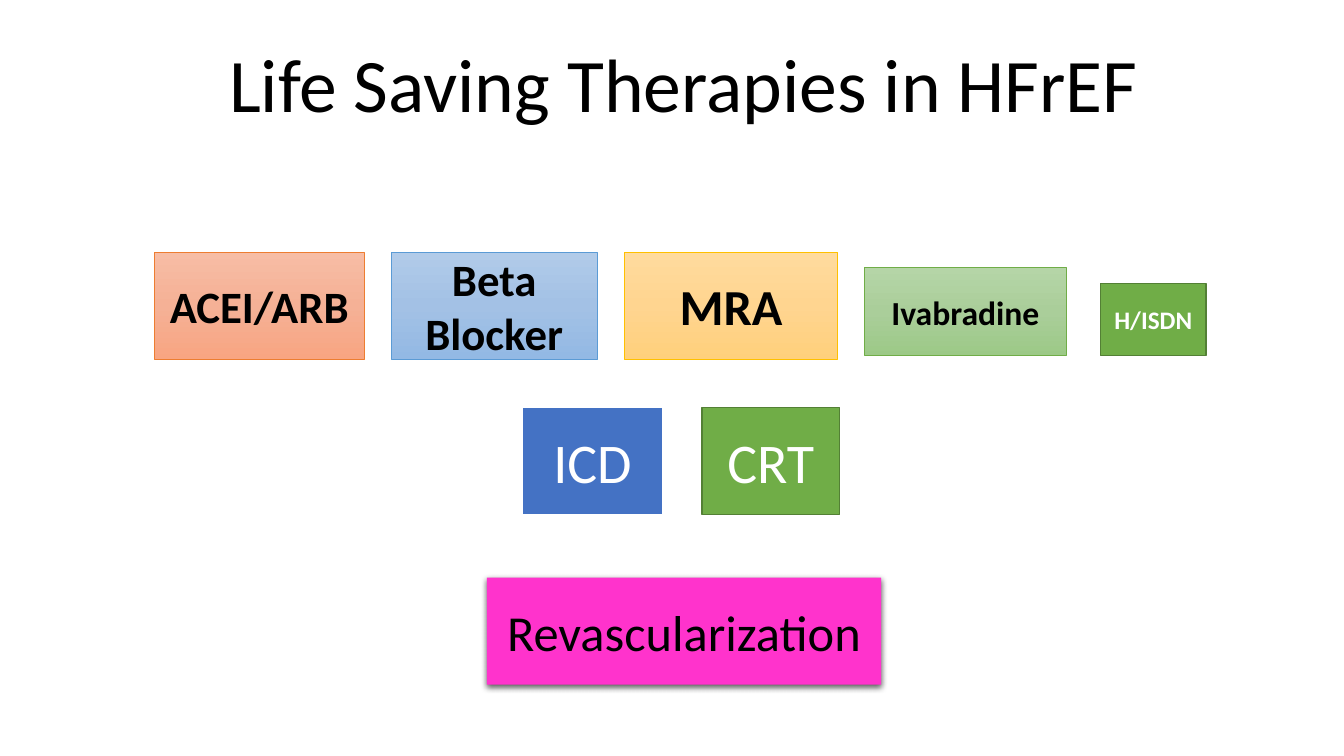
from copy import deepcopy

from pptx import Presentation
from pptx.dml.color import RGBColor
from pptx.enum.shapes import MSO_SHAPE
from pptx.enum.text import MSO_ANCHOR, MSO_AUTO_SIZE, PP_ALIGN
from pptx.oxml import parse_xml
from pptx.util import Inches, Pt

TITLE = "Life Saving Therapies in HFrEF"
TITLE_AREA = (15.95, 4.15, 69.84, 13.47)
BLACK, WHITE = "000000", "FFFFFF"
GREEN, DARK_GREEN = "70AD47", "538035"
DRUG_TOP, DEVICE_TOP, SURGERY_TOP = 33.33, 53.89, 76.4
BOX_HEIGHT = 14.18

# text, (left, top, width, height) in percent, fills, line, font
THERAPIES = [
    ("ACEI/ARB", (11.47, DRUG_TOP, 15.65, BOX_HEIGHT),
     ("F7BDA5", "F5B196", "F8A582"), ("ED7D31", 0.5), (32, True, BLACK)),
    ("Beta Blocker", (29.11, DRUG_TOP, 15.34, BOX_HEIGHT),
     ("B1CBE9", "A3C1E5", "93B9E4"), ("5B9BD5", 0.5), (32, True, BLACK)),
    ("MRA", (46.44, DRUG_TOP, 15.9, BOX_HEIGHT),
     ("FFDB9E", "FFD590", "FFD07C"), ("FFC000", 0.5), (36, True, BLACK)),
    ("Ivabradine", (64.33, 35.4, 15, 11.65),
     ("B5D5A7", "AACE9A", "9CC987"), (GREEN, 0.5), (24, True, BLACK)),
    ("H/ISDN", (81.87, 37.53, 7.88, 9.5),
     (GREEN,), (DARK_GREEN, 1), (18, True, WHITE)),
    ("ICD", (38.86, DEVICE_TOP, 10.46, BOX_HEIGHT),
     ("4472C4",), (WHITE, 1.5), (40, False, WHITE)),
    ("CRT", (52.24, DEVICE_TOP, 10.22, BOX_HEIGHT),
     (GREEN,), (DARK_GREEN, 1), (40, False, WHITE)),
    ("Revascularization", (36.23, SURGERY_TOP, 29.33, BOX_HEIGHT),
     ("FF33CC",), None, (36, False, BLACK)),
]
SHADOW = (
    '<a:outerShdw xmlns:a="http://schemas.openxmlformats.org/drawingml/2006/main" '
    'blurRad="57150" dist="19050" dir="5400000" algn="ctr" rotWithShape="0">'
    '<a:srgbClr val="000000"><a:alpha val="63000"/></a:srgbClr></a:outerShdw>'
)


def color(value):
    """Turn a hex string into a colour."""
    return RGBColor.from_string(value)


def place(deck, area):
    """Turn percentages of the slide into lengths."""
    sides = (deck.slide_width, deck.slide_height) * 2
    return [round(side * share / 100) for side, share in zip(sides, area)]


def write(box, text, size, bold, ink):
    """Put one centred paragraph into a box."""
    box.text_frame.text = text
    box.text_frame.vertical_anchor = MSO_ANCHOR.MIDDLE
    para = box.text_frame.paragraphs[0]
    para.alignment = PP_ALIGN.CENTER
    span = para.runs[0]
    for name, value in {"name": "Calibri", "size": Pt(size), "bold": bold}.items():
        setattr(span.font, name, value)
    span.font.color.rgb = color(ink)


def paint(box, fills):
    """Fill a box with one colour or a downward gradient."""
    if len(fills) == 1:
        box.fill.solid()
        box.fill.fore_color.rgb = color(fills[0])
        return
    box.fill.gradient()
    box.fill.gradient_angle = 270
    stop_list = box.element.spPr.xpath(".//a:gsLst")[0]
    stop_list.append(deepcopy(stop_list[0]))
    for index, (stop, value) in enumerate(zip(box.fill.gradient_stops, fills)):
        stop.position = index / (len(fills) - 1)
        stop.color.rgb = color(value)


def add_therapy(deck, page, text, area, fills, line, font):
    """Draw one therapy box."""
    box = page.shapes.add_shape(MSO_SHAPE.RECTANGLE, *place(deck, area))
    box.shadow.inherit = False
    paint(box, fills)
    if line:
        box.line.color.rgb = color(line[0])
        box.line.width = Pt(line[1])
    else:
        box.line.fill.background()
        box.element.spPr.xpath("./a:effectLst")[0].append(parse_xml(SHADOW))
    write(box, text, *font)


def main():
    """Build and save the slide."""
    deck = Presentation()
    deck.slide_width, deck.slide_height = Inches(13.33), Inches(7.5)
    page = deck.slides.add_slide(deck.slide_layouts[5])
    title = page.shapes.title
    title.left, title.top, title.width, title.height = place(deck, TITLE_AREA)
    title.text_frame.auto_size = MSO_AUTO_SIZE.NONE
    title.text_frame.word_wrap = False
    write(title, TITLE, 54, False, BLACK)
    for therapy in THERAPIES:
        add_therapy(deck, page, *therapy)
    deck.save("out.pptx")


if __name__ == "__main__":
    main()
